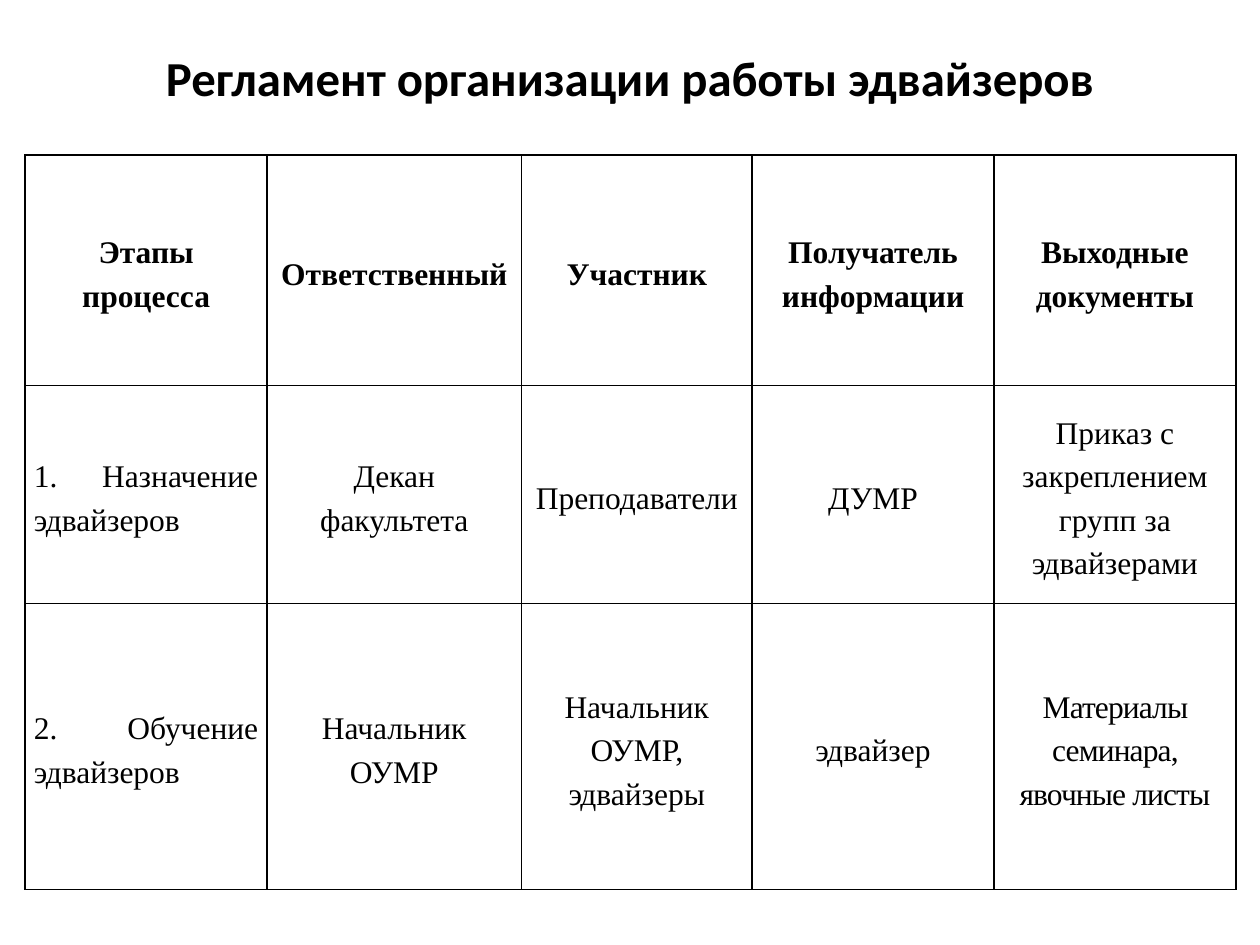
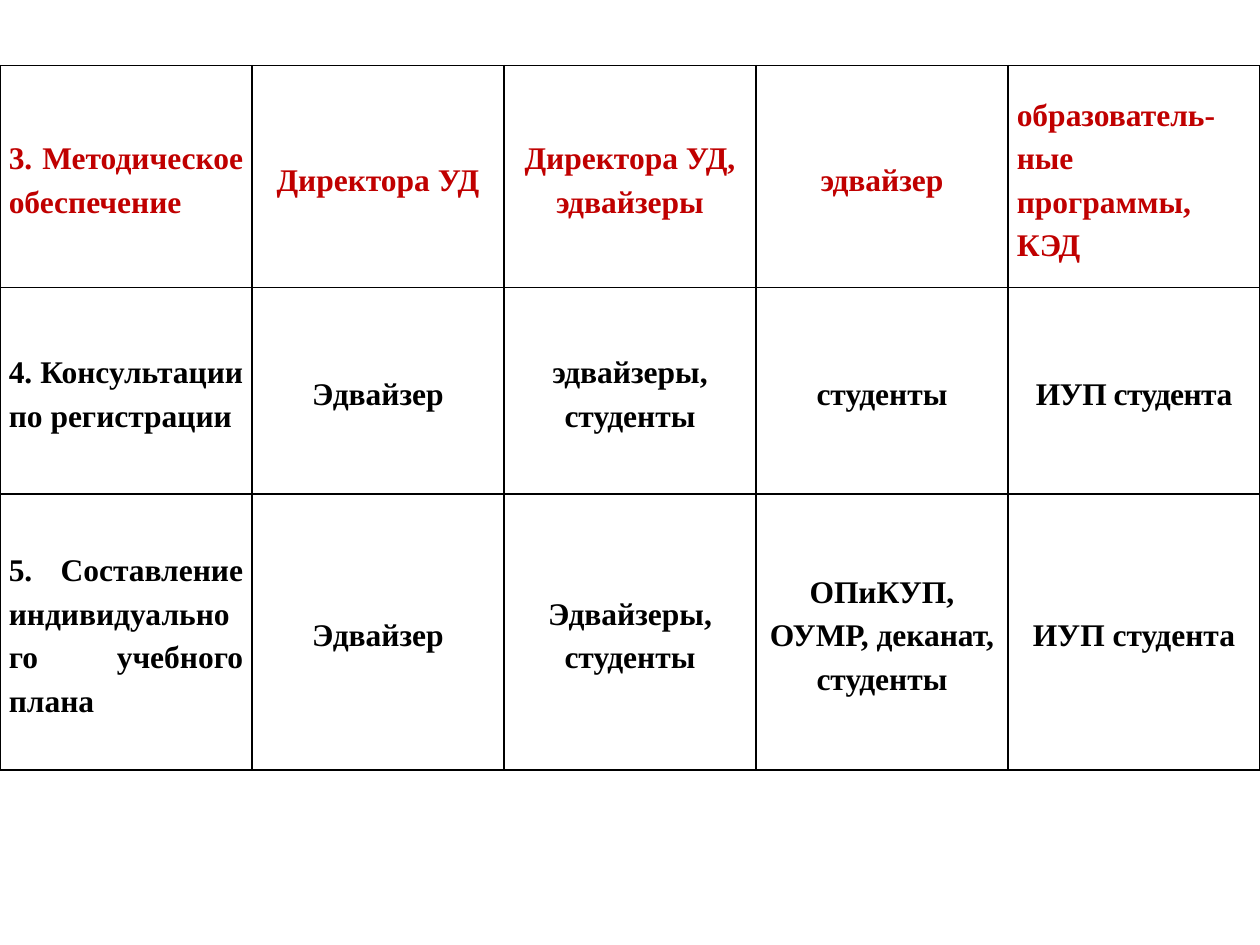
import dataclasses

import pptx
import pptx.dml.color
import pptx.enum.text
import pptx.oxml
import pptx.oxml.ns
import pptx.util

Inches = pptx.util.Inches
Pt = pptx.util.Pt
ALIGN = pptx.enum.text.PP_ALIGN
ANCHOR = pptx.enum.text.MSO_ANCHOR

COLORS = {"text": "000000", "accent": "C00000", "paper": "FFFFFF", "border": "000000"}
TITLE_FONT = {"name": "Calibri", "size": Pt(27.9), "bold": True}
CELL_FONT = {"name": "Times New Roman", "size": Pt(18)}
CELL_FORMAT = {
    "margin_left": Inches(0.07),
    "margin_right": Inches(0.07),
    "margin_top": Inches(0),
    "margin_bottom": Inches(0),
    "vertical_anchor": ANCHOR.MIDDLE,
}
TITLE_BOX = {"left": Inches(0.5), "top": Inches(0.3), "width": Inches(9), "height": Inches(1.25)}
TITLE_FRAME = {"vertical_anchor": ANCHOR.TOP, "margin_top": Inches(0.08), "word_wrap": True}


@dataclasses.dataclass
class Cell:
    text: str
    align: ALIGN = ALIGN.CENTER
    before: float = 0
    spacing: float = 0


@dataclasses.dataclass
class Row:
    height: float
    cells: list[Cell]
    bold: bool = True
    color: str = "text"


@dataclasses.dataclass
class Grid:
    left: float
    top: float
    widths: list[float]
    rows: list[Row]


def stage(text: str) -> Cell:
    return Cell(text, ALIGN.JUSTIFY)


def responsible(text: str) -> Cell:
    return Cell(text, before=10)


APPOINTMENT = Grid(0.2, 1.23, [1.92, 2.02, 1.83, 1.92, 1.92], [
    Row(1.83, [
        Cell("Этапы процесса"),
        Cell("Ответственный"),
        Cell("Участник"),
        Cell("Получатель информации"),
        Cell("Выходные документы"),
    ]),
    Row(1.73, [
        stage("1. Назначение эдвайзеров"),
        Cell("Декан факультета"),
        Cell("Преподаватели"),
        Cell("ДУМР"),
        Cell("Приказ с закреплением групп за эдвайзерами"),
    ], bold=False),
    Row(2.27, [
        stage("2. Обучение эдвайзеров"),
        responsible("Начальник ОУМР"),
        Cell("Начальник ОУМР, эдвайзеры"),
        Cell("эдвайзер"),
        Cell("Материалы семинара, явочные листы", spacing=-0.5),
    ], bold=False),
])

SUPPORT = Grid(0, 0.52, [2] * 5, [
    Row(1.76, [
        stage("3. Методическое обеспечение"),
        responsible("Директора УД"),
        Cell("Директора УД, эдвайзеры"),
        Cell("эдвайзер"),
        Cell("образователь-ные программы, КЭД", ALIGN.JUSTIFY),
    ], color="accent"),
    Row(1.64, [
        stage("4. Консультации по регистрации"),
        responsible("Эдвайзер"),
        Cell("эдвайзеры, студенты"),
        Cell("студенты"),
        Cell("ИУП студента", spacing=-0.3),
    ]),
    Row(2.19, [
        stage("5. Составление индивидуального учебного плана"),
        responsible("Эдвайзер"),
        Cell("Эдвайзеры, студенты"),
        Cell("ОПиКУП, ОУМР, деканат, студенты"),
        Cell("ИУП студента"),
    ]),
])


def apply(target: object, values: dict) -> None:
    for name, value in values.items():
        setattr(target, name, value)


def rgb(name: str) -> pptx.dml.color.RGBColor:
    return pptx.dml.color.RGBColor.from_string(COLORS[name])


def add_run(p, text: str, font: dict, color: str):
    r = p.add_run()
    r.text = text
    apply(r.font, font)
    r.font.color.rgb = rgb(color)
    return r


def add_borders(cell) -> None:
    tc_pr = cell._tc.get_or_add_tcPr()
    for side in ("lnL", "lnR", "lnT", "lnB"):
        tc_pr.append(pptx.oxml.parse_xml(
            f'<a:{side} {pptx.oxml.ns.nsdecls("a")} w="{Pt(1)}"><a:solidFill>'
            f'<a:srgbClr val="{COLORS["border"]}"/></a:solidFill></a:{side}>'
        ))


def fill_cell(cell, item: Cell, row: Row) -> None:
    add_borders(cell)
    cell.fill.solid()
    cell.fill.fore_color.rgb = rgb("paper")
    apply(cell, CELL_FORMAT)
    p = cell.text_frame.paragraphs[0]
    apply(p, {"alignment": item.align, "line_spacing": 1.25, "space_before": Pt(item.before)})
    r = add_run(p, item.text, CELL_FONT | {"bold": row.bold}, row.color)
    if item.spacing:
        r._r.get_or_add_rPr().set("spc", str(round(item.spacing * 100)))


def add_grid(s, grid: Grid) -> None:
    height = sum(row.height for row in grid.rows)
    sp = s.shapes.add_table(
        len(grid.rows), len(grid.widths),
        Inches(grid.left), Inches(grid.top), Inches(sum(grid.widths)), Inches(height),
    )
    table = sp.table
    apply(table, {"first_row": False, "horz_banding": False})
    for column, width in zip(table.columns, grid.widths):
        column.width = Inches(width)
    for table_row, row in zip(table.rows, grid.rows):
        table_row.height = Inches(row.height)
        for cell, item in zip(table_row.cells, row.cells):
            fill_cell(cell, item, row)


def set_title(s, text: str) -> None:
    sp = s.shapes.title
    apply(sp, TITLE_BOX)
    tf = sp.text_frame
    apply(tf, TITLE_FRAME)
    p = tf.paragraphs[0]
    p.alignment = ALIGN.CENTER
    add_run(p, text, TITLE_FONT, "text")


def add_slide(prs, layout: str):
    s = prs.slides.add_slide(prs.slide_layouts.get_by_name(layout))
    s.background.fill.solid()
    s.background.fill.fore_color.rgb = rgb("paper")
    return s


def main() -> None:
    prs = pptx.Presentation()
    apply(prs, {"slide_width": Inches(10), "slide_height": Inches(7.5)})
    s = add_slide(prs, "Title Only")
    set_title(s, "Регламент организации работы эдвайзеров")
    add_grid(s, APPOINTMENT)
    add_grid(add_slide(prs, "Blank"), SUPPORT)
    prs.save("out.pptx")


if __name__ == "__main__":
    main()
